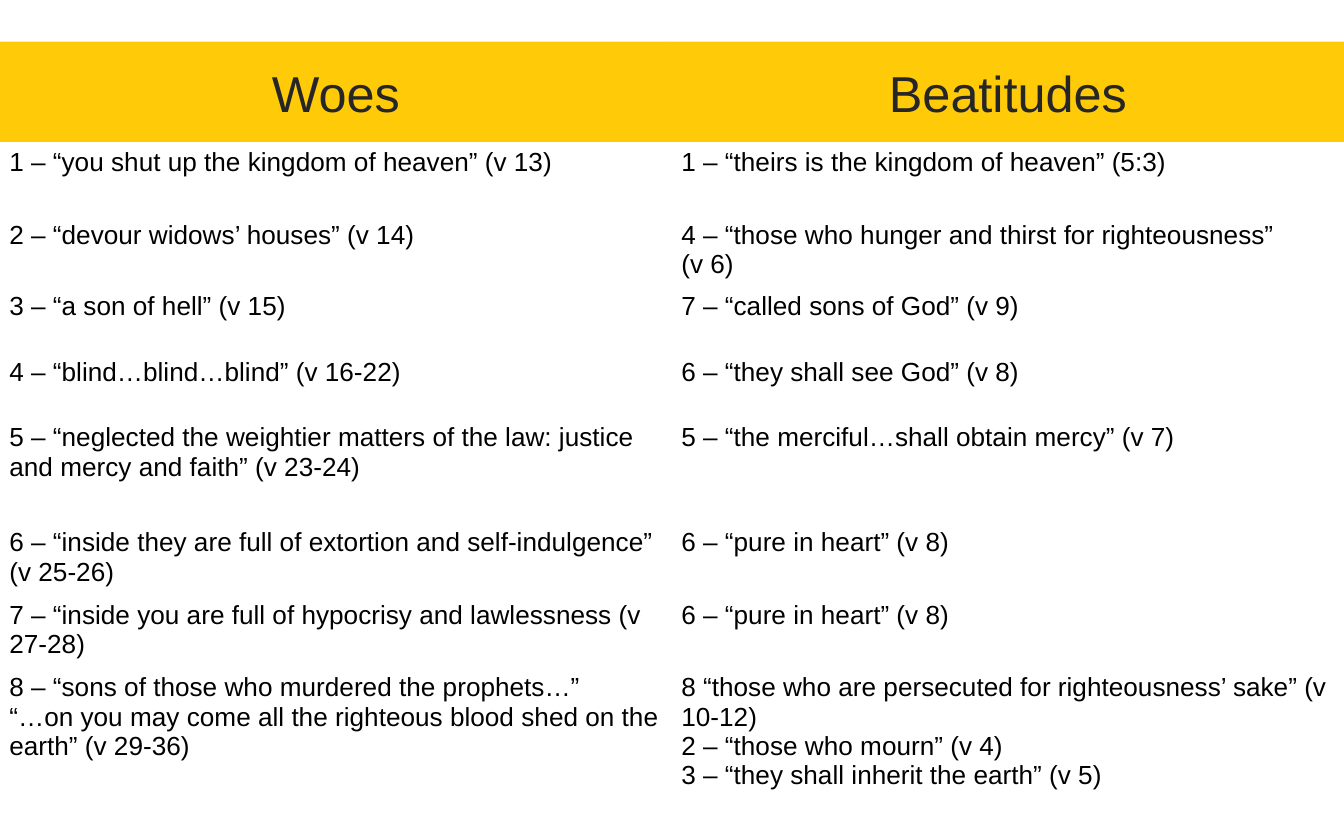
from pptx import Presentation
from pptx.dml.color import RGBColor
from pptx.enum.shapes import MSO_SHAPE
from pptx.enum.text import MSO_ANCHOR, PP_ALIGN
from pptx.util import Inches, Pt

RECT = MSO_SHAPE.RECTANGLE
MIDDLE = MSO_ANCHOR.MIDDLE
CENTER = PP_ALIGN.CENTER
GOLD = RGBColor(0xFF, 0xCA, 0x08)
DARK = RGBColor(0x26, 0x26, 0x26)
BLACK = RGBColor(0, 0, 0)

HEADS = ["Woes", "Beatitudes"]
# Row height, woe, beatitude; each line break starts a new paragraph
ROWS = [
    (0.54, "1 – “you shut up the kingdom of heaven” (v 13)",
     "1 – “theirs is the kingdom of heaven” (5:3)"),
    (0.53, "2 – “devour widows’ houses” (v 14)",
     "4 – “those who hunger and thirst for righteousness”\n(v 6)"),
    (0.49, "3 – “a son of hell” (v 15)",
     "7 – “called sons of God” (v 9)"),
    (0.49, "4 – “blind…blind…blind” (v 16-22)",
     "6 – “they shall see God” (v 8)"),
    (0.78, "5 – “neglected the weightier matters of the law: justice and mercy "
     "and faith” (v 23-24)",
     "5 – “the merciful…shall obtain mercy” (v 7)"),
    (0.54, "6 – “inside they are full of extortion and self-indulgence” (v 25-26)",
     "6 – “pure in heart” (v 8)"),
    (0.54, "7 – “inside you are full of hypocrisy and lawlessness (v 27-28)",
     "6 – “pure in heart” (v 8)"),
    (1.02, "8 – “sons of those who murdered the prophets…”\n"
     "“…on you may come all the righteous blood shed on the earth” (v 29-36)",
     "8 “those who are persecuted for righteousness’ sake” (v 10-12)\n"
     "2 – “those who mourn” (v 4)\n"
     "3 – “they shall inherit the earth” (v 5)"),
]

WIDTH, HEIGHT = 10, 6.25
COL = WIDTH / len(HEADS)
HEAD_TOP, HEAD_HIGH = 0.31, 0.75
INSETS = {"margin_left": Inches(0.07), "margin_right": Inches(0.07),
          "margin_top": Inches(0.04), "margin_bottom": Inches(0.04)}


def style(frame, size, color):
    for para in frame.paragraphs:
        for run in para.runs:
            run.font.name = "Arial"
            run.font.size = Pt(size)
            run.font.color.rgb = color


def add_head(slide, col, text):
    box = slide.shapes.add_shape(RECT, Inches(col * COL), Inches(HEAD_TOP),
                                 Inches(COL), Inches(HEAD_HIGH))
    box.shadow.inherit = False
    box.fill.solid()
    box.fill.fore_color.rgb = GOLD
    box.line.fill.background()
    frame = box.text_frame
    frame.text = text
    frame.vertical_anchor = MIDDLE
    frame.paragraphs[0].alignment = CENTER
    style(frame, 27, DARK)


def add_pairs(slide):
    """Add the table that sets each woe beside its beatitude."""
    high = sum(row[0] for row in ROWS)
    table = slide.shapes.add_table(
        len(ROWS), len(HEADS), 0, Inches(HEAD_TOP + HEAD_HIGH),
        Inches(WIDTH), Inches(high)).table
    table.first_row = table.horz_banding = False
    for row, (tall, *texts) in zip(table.rows, ROWS):
        row.height = Inches(tall)
        for cell, text in zip(row.cells, texts):
            cell.text = text
            cell.fill.background()
            for name, value in INSETS.items():
                setattr(cell, name, value)
            style(cell.text_frame, 14, BLACK)


def main():
    deck = Presentation()
    deck.slide_width, deck.slide_height = Inches(WIDTH), Inches(HEIGHT)
    slide = deck.slides.add_slide(deck.slide_layouts[6])
    for col, text in enumerate(HEADS):
        add_head(slide, col, text)
    add_pairs(slide)
    deck.save("out.pptx")


if __name__ == "__main__":
    main()
